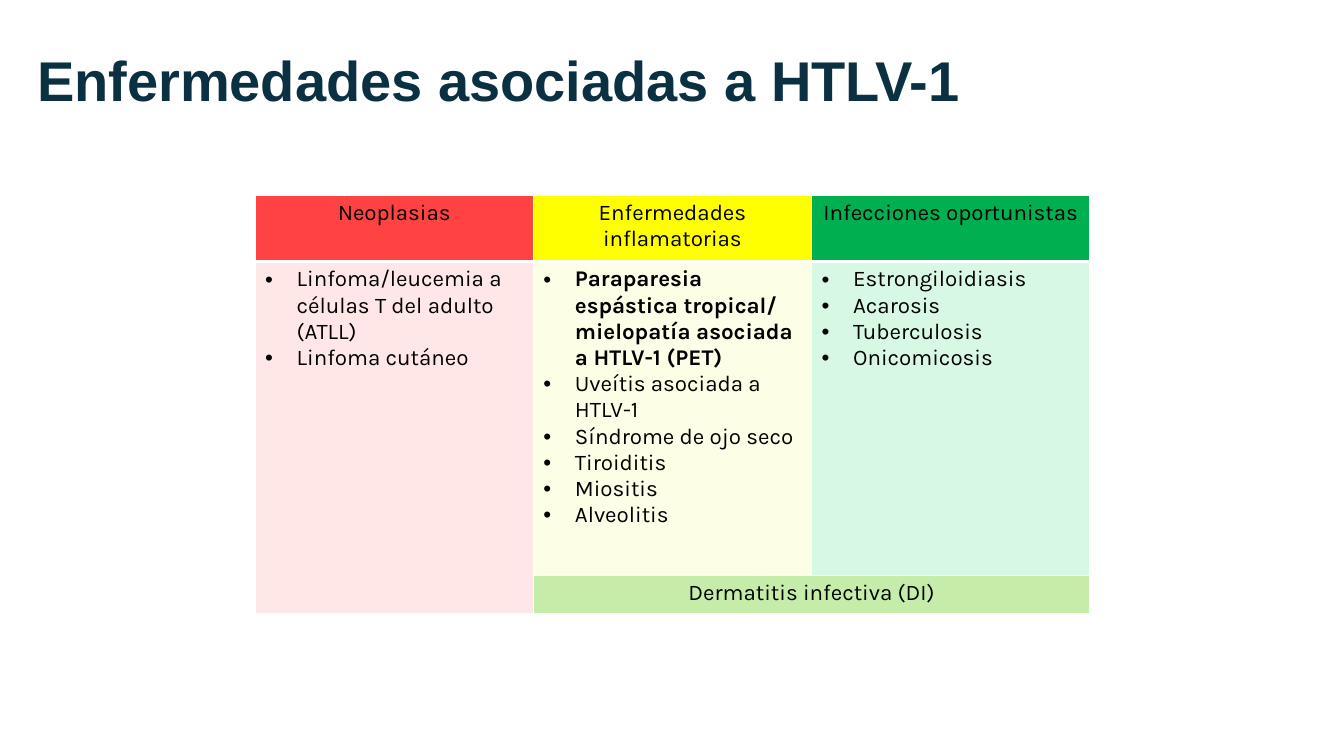
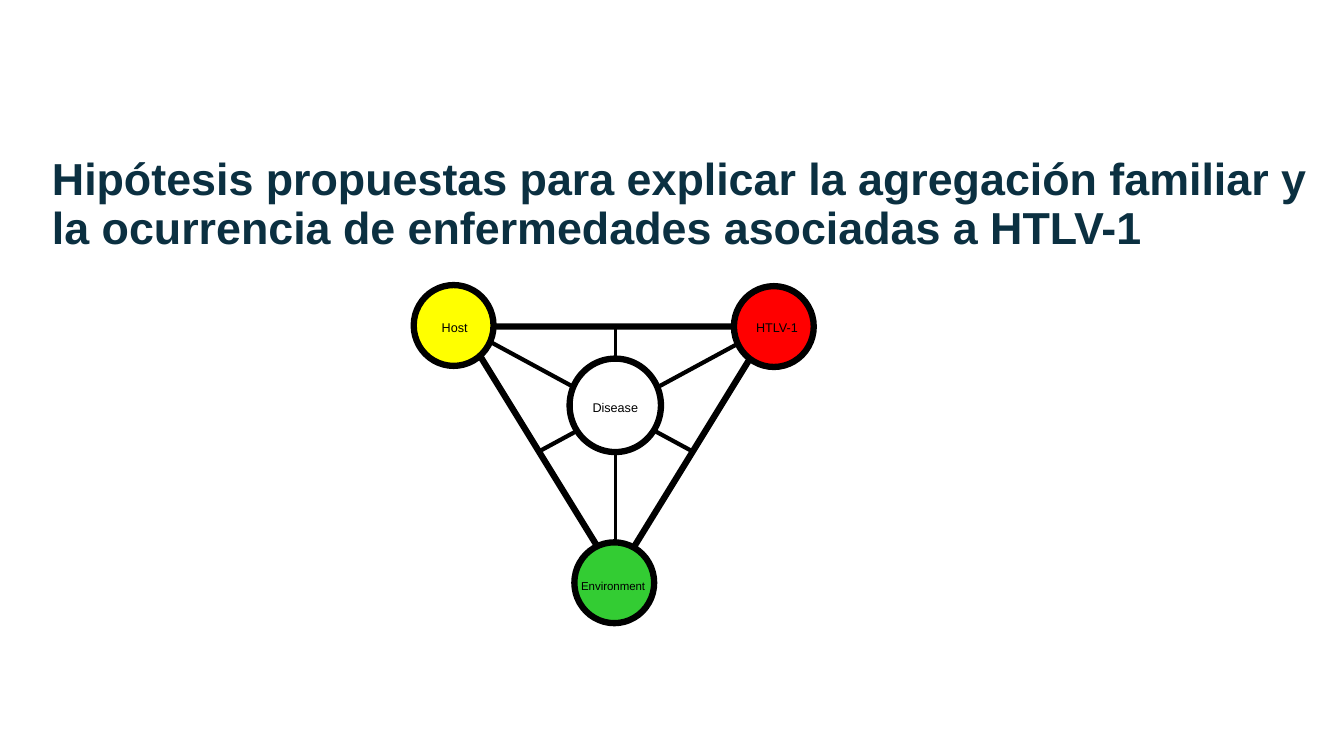
from lxml import etree
from pptx import Presentation
from pptx import util as u
from pptx.dml.color import RGBColor
from pptx.enum import shapes, text
from pptx.oxml.ns import qn

PX = 9525  # EMU in one px, 96 px to the inch
COLORS = {
    "title": "0B3041", "black": "000000", "white": "FFFFFF",
    "red_head": "FF4343", "yellow": "FFFF00", "green_head": "00B050",
    "pink": "FFE7E7", "cream": "FCFEE6", "mint": "D7F9E3", "lime": "C5EDA9",
    "red": "FF0000", "green": "33CC33",
}
LEFT, CENTER = text.PP_ALIGN.LEFT, text.PP_ALIGN.CENTER
TOP, MIDDLE = text.MSO_ANCHOR.TOP, text.MSO_ANCHOR.MIDDLE


def px(*values):
    return [u.Emu(round(v * PX)) for v in values]


def rgb(name):
    return RGBColor.from_string(COLORS[name])


# Text
def add_bullet(p, indent=30):
    pPr = p._p.get_or_add_pPr()
    pPr.set("marL", str(indent * PX))
    pPr.set("indent", str(-indent * PX))
    etree.SubElement(pPr, qn("a:buFont")).set("typeface", "Arial")
    etree.SubElement(pPr, qn("a:buChar")).set("char", "•")


def write(tf, *lines, size=16, font="Arial", color="black", bold=False,
          align=LEFT, spacing=None, bullets=False):
    """Write one paragraph per line; bold may be the set of bold lines."""
    for i, line in enumerate(lines):
        p = tf.paragraphs[0] if i == 0 else tf.add_paragraph()
        p.alignment = align
        if spacing:
            p.line_spacing = spacing
        if bullets:
            add_bullet(p)
        r = p.add_run()
        r.text = line
        r.font.size, r.font.name = u.Pt(size), font
        r.font.bold = line in bold if isinstance(bold, set) else bold
        r.font.color.rgb = rgb(color)


def add_text(s, box, line, anchor=TOP, **fmt):
    tf = s.shapes.add_textbox(*px(*box)).text_frame
    tf.word_wrap = True
    tf.vertical_anchor = anchor
    write(tf, line, **fmt)


def add_title(s, box, line, size, anchor=TOP):
    add_text(s, box, line, anchor, size=size, color="title", bold=True, spacing=0.9)


# Table
def style_cell(cell, fill, bottom=1):
    tcPr = cell._tc.get_or_add_tcPr()
    for side, width in (("L", 1), ("R", 1), ("T", 1), ("B", bottom)):
        ln = etree.SubElement(tcPr, qn("a:ln" + side), w=str(u.Pt(width)))
        solid = etree.SubElement(ln, qn("a:solidFill"))
        etree.SubElement(solid, qn("a:srgbClr")).set("val", COLORS["white"])
    cell.fill.solid()
    cell.fill.fore_color.rgb = rgb(fill)


def add_disease_table(s, left, top, col_width, row_heights, columns, shared):
    rows, cols = len(row_heights), len(columns)
    width, height = col_width * cols, sum(row_heights)
    table = s.shapes.add_table(rows, cols, *px(left, top, width, height)).table
    for column in table.columns:
        column.width = px(col_width)[0]
    for row, h in zip(table.rows, row_heights):
        row.height = px(h)[0]

    for c, (head, head_fill, body_fill, items, bold) in enumerate(columns):
        style_cell(table.cell(0, c), head_fill, bottom=3)
        style_cell(table.cell(1, c), body_fill)
        style_cell(table.cell(2, c), "lime" if c else body_fill)
        write(table.cell(0, c).text_frame, head, font="Karla", align=CENTER)
        write(table.cell(1, c).text_frame, *items, font="Karla", bold=bold, bullets=True)
    table.cell(1, 0).merge(table.cell(2, 0))
    table.cell(2, 1).merge(table.cell(2, 2))
    write(table.cell(2, 1).text_frame, shared, font="Karla", align=CENTER)


# Diagram
def add_outlined(s, kind, box, fill=None):
    sp = s.shapes.add_shape(kind, *px(*box))
    sp.shadow.inherit = False
    if fill:
        sp.fill.solid()
        sp.fill.fore_color.rgb = rgb(fill)
    else:
        sp.fill.background()
    sp.line.color.rgb = rgb("black")
    sp.line.width = u.Pt(4.5)
    return sp


def add_line(s, start, end, width):
    cx = s.shapes.add_connector(shapes.MSO_CONNECTOR.STRAIGHT, *px(*start, *end))
    cx.line.color.rgb = rgb("black")
    cx.line.width = u.Pt(width)
    etree.SubElement(cx._element.spPr, qn("a:effectLst"))


def add_triad(s, left, top, width, height):
    """Inverted triangle, its medians, and a circle at each corner and inside."""
    triangle = add_outlined(s, shapes.MSO_SHAPE.ISOSCELES_TRIANGLE, (left, top, width, height))
    triangle.rotation = 180
    mid_x, mid_y = left + width / 2, top + height / 2
    right, bottom = left + width, top + height
    add_line(s, (right, top), (left + width / 4, mid_y), 3)
    add_line(s, (left, top), (right - width / 4, mid_y), 3)
    add_line(s, (mid_x, top), (mid_x, bottom), 2.25)

    nodes = [  # centre, size, fill, label, label centre, label size
        ((586, 386), (87, 89), "white", "Disease", (586, 388), 9),
        ((432, 310), (76, 77), "yellow", "Host", (433, 312), 9),
        ((585, 555), (76, 77), "green", "Environment", (584, 559), 8.2),
        ((737, 311), (76, 77), "red", "HTLV-1", (740, 312), 9),
    ]
    for (x, y), (w, h), fill, *_ in nodes:
        add_outlined(s, shapes.MSO_SHAPE.OVAL, (x - w / 2, y - h / 2, w, h), fill)
    for *_, label, (x, y), size in nodes:
        add_text(s, (x - 50, y - 12, 100, 24), label, size=size, align=CENTER)


def main():
    prs = Presentation()
    prs.slide_width, prs.slide_height = px(1280, 720)
    blank = prs.slide_layouts[6]

    # Diseases by group
    s = prs.slides.add_slide(blank)
    add_title(s, (26, 41, 1131, 77), "Enfermedades asociadas a HTLV-1", 40, MIDDLE)
    paraparesis = "Paraparesia espástica tropical/ mielopatía asociada a HTLV-1 (PET)"
    columns = [  # heading, heading fill, body fill, items, bold items
        ("Neoplasias", "red_head", "pink",
         ["Linfoma/leucemia a células T del adulto (ATLL)", "Linfoma cutáneo"], False),
        ("Enfermedades inflamatorias", "yellow", "cream",
         [paraparesis, "Uveítis asociada a HTLV-1", "Síndrome de ojo seco",
          "Tiroiditis", "Miositis", "Alveolitis"], {paraparesis}),
        ("Infecciones oportunistas", "green_head", "mint",
         ["Estrongiloidiasis", "Acarosis", "Tuberculosis", "Onicomicosis"], False),
    ]
    add_disease_table(s, 243, 186, 265, (63, 299, 36), columns, "Dermatitis infectiva (DI)")

    # Hypotheses
    s = prs.slides.add_slide(blank)
    add_title(s, (40, 145, 1237, 112),
              "Hipótesis propuestas para explicar la agregación familiar y la "
              "ocurrencia de enfermedades asociadas a HTLV-1", 32)
    add_triad(s, 440, 311, 293, 238)

    prs.save("out.pptx")


if __name__ == "__main__":
    main()
